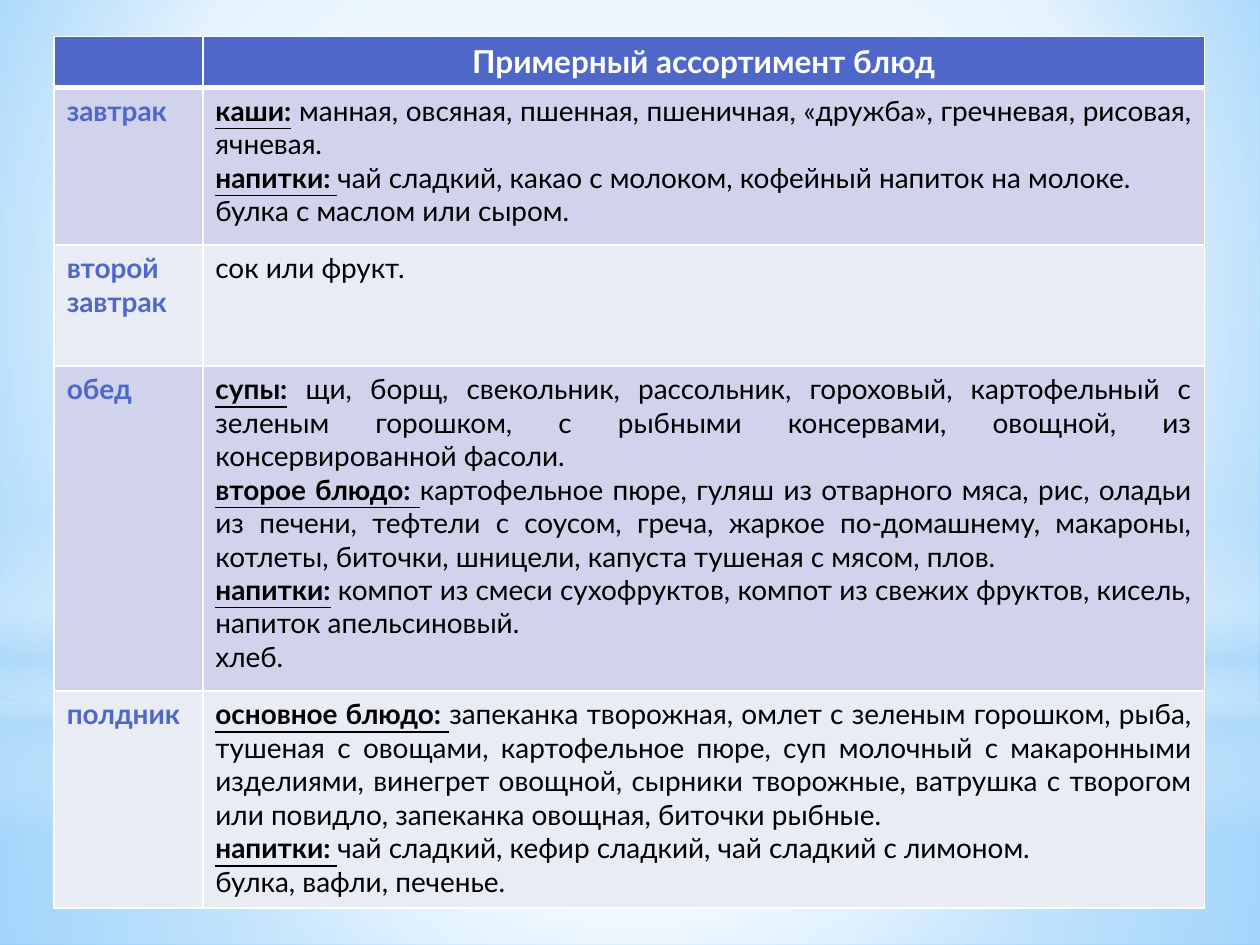
"""Builds a slide with a kindergarten menu table on a soft blue sky background."""
from lxml import etree
from pptx import Presentation
from pptx.dml.color import RGBColor
from pptx.enum.shapes import MSO_SHAPE
from pptx.enum.text import PP_ALIGN
from pptx.oxml.ns import qn
from pptx.util import Inches, Pt

RECT, OVAL = MSO_SHAPE.RECTANGLE, MSO_SHAPE.OVAL
LEFT, CENTER, JUSTIFY = PP_ALIGN.LEFT, PP_ALIGN.CENTER, PP_ALIGN.JUSTIFY
WHITE = RGBColor(0xFF, 0xFF, 0xFF)
BLACK = RGBColor(0, 0, 0)
INDIGO = RGBColor(0x4E, 0x67, 0xC8)
LILAC = RGBColor(0xD0, 0xD3, 0xEB)
PALE = RGBColor(0xE9, 0xEB, 0xF5)
SKY = RGBColor(0xB4, 0xDC, 0xFA)
SKY_CENTER = RGBColor(0x9E, 0xD5, 0xFF)
SKY_EDGE = RGBColor(0x5B, 0xB9, 0xFF)
FONT = "Lato"
MIDDLE = (50, 50, 50, 50)


def set_gradient(owner, stops, focus):
    gradient = owner.find(".//" + qn("a:gradFill"))
    for child in list(gradient):
        gradient.remove(child)
    stop_list = etree.SubElement(gradient, qn("a:gsLst"))
    for position, color, opacity in stops:
        stop = etree.SubElement(stop_list, qn("a:gs"), pos=str(position * 1000))
        tint = etree.SubElement(stop, qn("a:srgbClr"), val=str(color))
        if opacity < 100:
            etree.SubElement(tint, qn("a:alpha"), val=str(opacity * 1000))
    if focus:
        circle = etree.SubElement(gradient, qn("a:path"), path="circle")
        sides = {side: str(share * 1000) for side, share in zip("ltrb", focus)}
        etree.SubElement(circle, qn("a:fillToRect"), **sides)
    else:
        etree.SubElement(gradient, qn("a:lin"), ang="5400000", scaled="0")


def set_borders(cell, widths):
    props = cell._tc.get_or_add_tcPr()
    for index, (side, width) in enumerate(zip("LRTB", widths)):
        line = etree.Element(qn("a:ln" + side), w=str(Pt(width)))
        solid = etree.SubElement(line, qn("a:solidFill"))
        etree.SubElement(solid, qn("a:srgbClr"), val=str(WHITE))
        props.insert(index, line)


prs = Presentation()
prs.slide_width, prs.slide_height = Inches(10), Inches(7.5)
slide = prs.slides.add_slide(prs.slide_layouts[6])

slide.background.fill.gradient()
set_gradient(slide._element,
             [(0, SKY_CENTER, 100), (60, WHITE, 100), (100, SKY_EDGE, 100)],
             (20, 10, 20, 60))

glows = [
    (RECT, 5.58, 1.92, [(0, WHITE, 91), (37, WHITE, 76), (100, SKY, 79)], MIDDLE),
    (RECT, 0, 5.58, [(0, WHITE, 89), (48, WHITE, 62), (100, SKY, 79)], MIDDLE),
    (RECT, 4.12, 2.5, [(0, WHITE, 0), (29, WHITE, 30), (45, SKY, 40),
                       (55, WHITE, 26), (65, SKY, 60), (100, WHITE, 0)], None),
    (OVAL, 1.75, 5.58, [(0, WHITE, 100), (56, WHITE, 0)], MIDDLE),
]
for outline, top, height, stops, focus in glows:
    glow = slide.shapes.add_shape(outline, 0, Inches(top), prs.slide_width, Inches(height))
    glow.shadow.inherit = False
    glow.line.fill.background()
    glow.fill.gradient()
    set_gradient(glow._element.spPr, stops, focus)

meals = [
    (1.25, ["завтрак"], JUSTIFY, [
        ("каши:", " манная, овсяная, пшенная, пшеничная, «дружба», гречневая, рисовая, ячневая."),
        ("напитки: ", "чай сладкий, какао с молоком, кофейный напиток на молоке."),
        ("", "булка с маслом или сыром."),
    ]),
    (0.96, ["второй", "завтрак"], LEFT, [("", "сок или фрукт.")]),
    (2.58, ["обед"], JUSTIFY, [
        ("супы:", " щи, борщ, свекольник, рассольник, гороховый, картофельный с зеленым "
                  "горошком, с рыбными консервами, овощной, из консервированной фасоли."),
        ("второе блюдо: ", "картофельное пюре, гуляш из отварного мяса, рис, оладьи из печени, "
                           "тефтели с соусом, греча, жаркое по-домашнему, макароны, котлеты, "
                           "биточки, шницели, капуста тушеная с мясом, плов."),
        ("напитки:", " компот из смеси сухофруктов, компот из свежих фруктов, кисель, "
                     "напиток апельсиновый."),
        ("", "хлеб."),
    ]),
    (1.72, ["полдник"], JUSTIFY, [
        ("основное блюдо: ", "запеканка творожная, омлет с зеленым горошком, рыба, тушеная с "
                             "овощами, картофельное пюре, суп молочный с макаронными изделиями, "
                             "винегрет овощной, сырники творожные, ватрушка с творогом или "
                             "повидло, запеканка овощная, биточки рыбные."),
        ("напитки: ", "чай сладкий, кефир сладкий, чай сладкий с лимоном."),
        ("", "булка, вафли, печенье."),
    ]),
]
title_row = (0.39, [], CENTER, [("Примерный ассортимент блюд", "")])
rows = [title_row] + meals
column_widths = [1.18, 7.95]

menu = slide.shapes.add_table(len(rows), len(column_widths), Inches(0.43), Inches(0.29),
                              Inches(sum(column_widths)),
                              Inches(sum(row[0] for row in rows))).table
for column, width in zip(menu.columns, column_widths):
    column.width = Inches(width)

for index, (height, label, alignment, dishes) in enumerate(rows):
    menu.rows[index].height = Inches(height)
    is_title = index == 0
    size = Pt(18 if is_title else 16)
    background = INDIGO if is_title else LILAC if index % 2 else PALE
    columns = [
        ([(line, "") for line in label], LEFT, INDIGO, False),
        (dishes, alignment, WHITE if is_title else BLACK, not is_title),
    ]
    for column, (lines, align, color, underlined) in enumerate(columns):
        cell = menu.cell(index, column)
        cell.fill.solid()
        cell.fill.fore_color.rgb = background
        set_borders(cell, (1, 1, 3 if index == 1 else 1, 3 if is_title else 1))
        for number, (heading, details) in enumerate(lines):
            frame = cell.text_frame
            paragraph = frame.add_paragraph() if number else frame.paragraphs[0]
            paragraph.alignment = align
            paragraph.font.name = FONT
            paragraph.font.size = size
            paragraph.font.color.rgb = color
            for text, strong in ((heading, True), (details, False)):
                if text:
                    run = paragraph.add_run()
                    run.text = text
                    run.font.bold = strong
                    run.font.underline = strong and underlined

prs.save("out.pptx")
